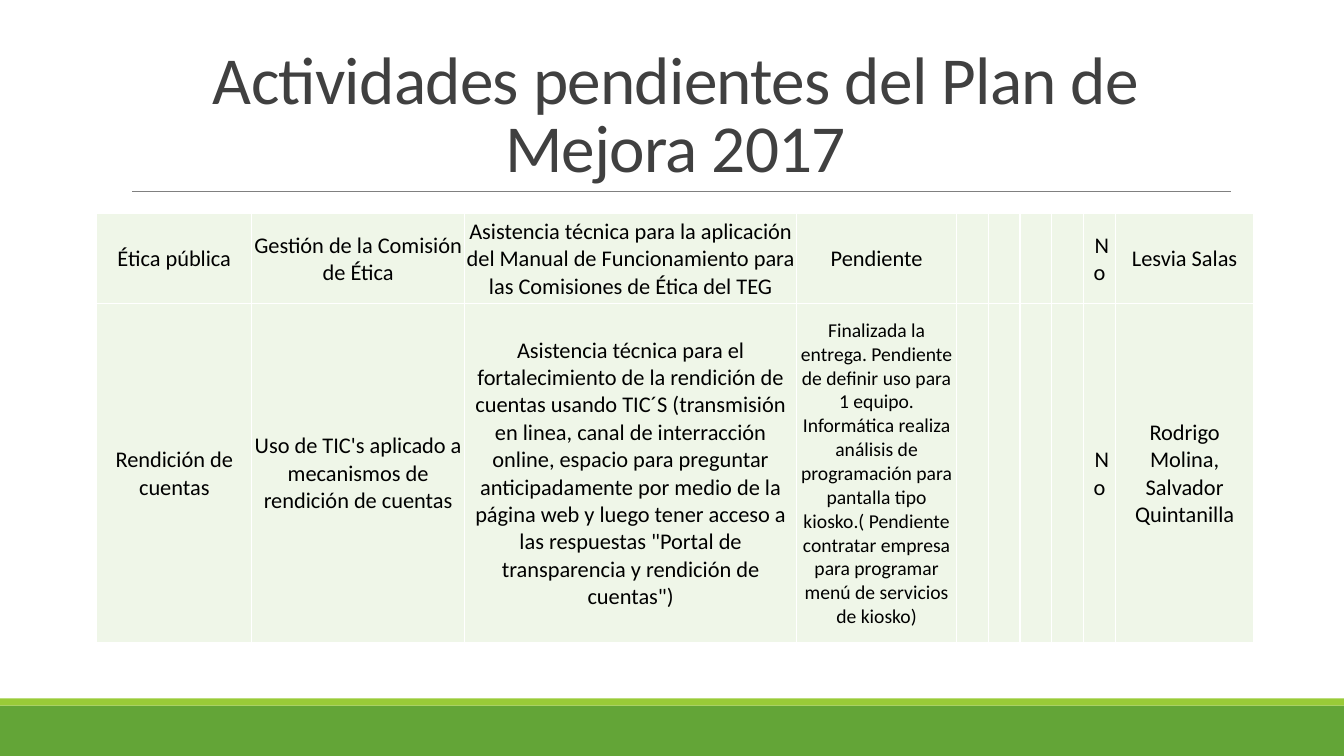
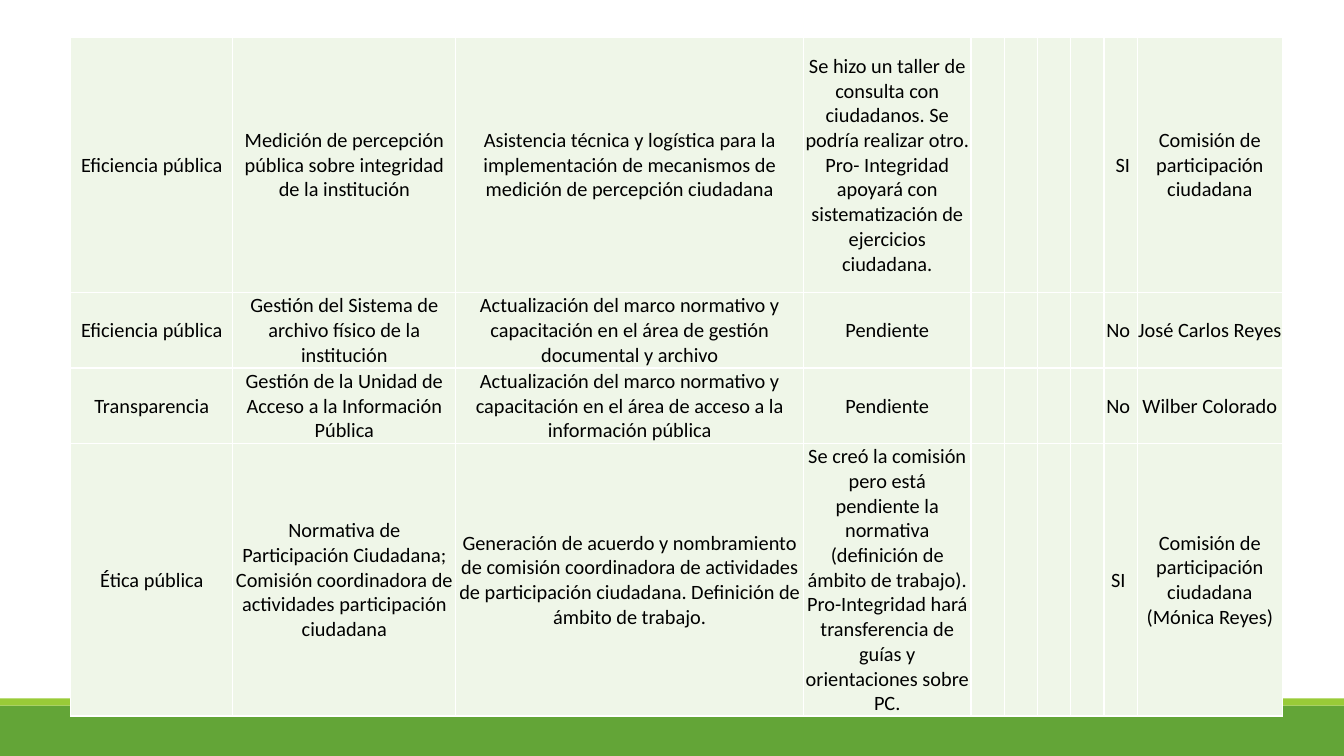
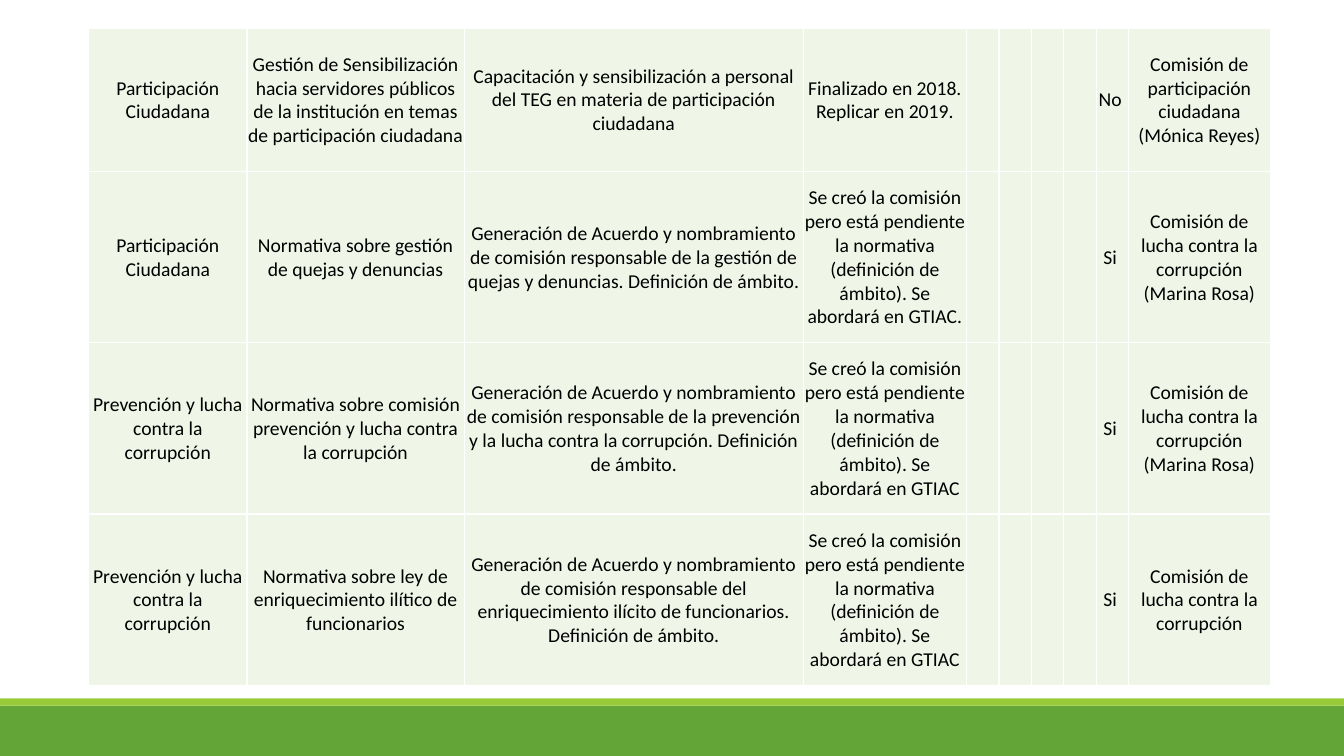
from dataclasses import dataclass

from lxml import etree
from pptx import Presentation
from pptx.dml.color import RGBColor
from pptx.enum.shapes import MSO_CONNECTOR, MSO_SHAPE
from pptx.enum.text import MSO_ANCHOR, MSO_AUTO_SIZE, PP_ALIGN
from pptx.oxml.ns import qn
from pptx.slide import Slide
from pptx.table import _Cell
from pptx.text.text import TextFrame
from pptx.util import Inches, Pt

RECTANGLE = MSO_SHAPE.RECTANGLE
STRAIGHT = MSO_CONNECTOR.STRAIGHT
CENTER = PP_ALIGN.CENTER
MIDDLE, BOTTOM = MSO_ANCHOR.MIDDLE, MSO_ANCHOR.BOTTOM
NO_AUTOFIT = MSO_AUTO_SIZE.NONE
TITLE_ONLY, BLANK = 5, 6

FONT = "Calibri"
COLORS = {
    "footer": "63A537",
    "accent": "99CB38",
    "rule": "808080",
    "title": "404040",
    "text": "000000",
    "cell": "EFF6E8",
    "border": "FFFFFF",
}
SLIDE_WIDTH, SLIDE_HEIGHT = 13.33, 7.5
NBSP = chr(160)  # no-break space

# Column widths at scale 1: four text columns, four empty ones, flag, lead
COLUMN_WIDTHS = [1.61, 2.21, 3.45, 1.66] + [0.33] * 5 + [1.44]
EMPTY_COLUMNS = 4


@dataclass(frozen=True)
class Band:
    top: float
    height: float
    color: str


@dataclass(frozen=True)
class Activity:
    axis: str
    area: str
    task: str
    status: str
    flag: str
    lead: str
    status_size: float | None = None


@dataclass(frozen=True)
class PlanPage:
    left: float
    top: float
    scale: float
    size: float
    row_heights: list[float]
    activities: list[Activity]
    title: str = ""


BANDS = [Band(7, 0.5, "footer"), Band(6.93, 0.07, "accent")]

# Wording that recurs
EFFICIENCY = "Eficiencia pública"
ETHICS = "Ética pública"
PARTICIPATION = "Participación Ciudadana"
PREVENTION = "Prevención y lucha contra la corrupción"
PENDING = "Pendiente"
SCOPE_PENDING = (
    "Se creó la comisión pero está pendiente la normativa "
    "(definición de ámbito). Se abordará en GTIAC"
)
PARTICIPATION_LEAD = "Comisión de participación ciudadana"
CORRUPTION_LEAD = "Comisión de lucha contra la corrupción"

PAGES = [
    PlanPage(
        0.96, 2.12, 0.955, 16, [0.89, 3.37],
        [
            Activity(
                ETHICS,
                "Gestión de la Comisión de Ética",
                "Asistencia técnica para la aplicación del Manual de "
                "Funcionamiento para las Comisiones de Ética del TEG",
                PENDING, f"{NBSP}No", "Lesvia Salas",
            ),
            Activity(
                "Rendición de cuentas",
                "Uso de TIC's aplicado a mecanismos de rendición de cuentas",
                "Asistencia técnica para el fortalecimiento de la rendición de "
                "cuentas usando TIC´S (transmisión en linea, canal de "
                "interracción online, espacio para preguntar anticipadamente "
                "por medio de la página web y luego tener acceso a las "
                'respuestas "Portal de transparencia y rendición de cuentas")',
                "Finalizada la entrega. Pendiente de definir uso para 1 equipo. "
                "Informática realiza análisis de programación para pantalla "
                "tipo kiosko.( Pendiente contratar empresa para programar menú "
                "de servicios de kiosko)",
                f"{NBSP}No", "Rodrigo Molina,\nSalvador Quintanilla",
                status_size=14,
            ),
        ],
        title="Actividades pendientes del Plan de Mejora 2017",
    ),
    PlanPage(
        0.7, 0.37, 1, 14.5, [2.53, 0.75, 0.75, 2.55],
        [
            Activity(
                EFFICIENCY,
                "Medición de percepción pública sobre integridad de la "
                "institución",
                "Asistencia técnica y logística para la implementación de "
                "mecanismos de medición de percepción ciudadana",
                "Se hizo un taller de consulta con ciudadanos. Se podría "
                "realizar otro. Pro- Integridad apoyará con sistematización "
                "de ejercicios ciudadana.",
                f"{NBSP}SI", PARTICIPATION_LEAD,
            ),
            Activity(
                EFFICIENCY,
                "Gestión del Sistema de archivo físico de la institución",
                "Actualización del marco normativo y capacitación en el área "
                "de gestión documental y archivo",
                PENDING, f"No{NBSP}", "José Carlos Reyes",
            ),
            Activity(
                "Transparencia",
                "Gestión de la Unidad de Acceso a la Información Pública",
                "Actualización del marco normativo y capacitación en el área "
                "de acceso a la información pública",
                PENDING, f"No{NBSP}", "Wilber Colorado",
            ),
            Activity(
                ETHICS,
                "Normativa de Participación Ciudadana; Comisión coordinadora "
                "de actividades participación ciudadana",
                "Generación de acuerdo y nombramiento de comisión coordinadora "
                "de actividades de participación ciudadana. Definición de "
                "ámbito de trabajo.",
                "Se creó la comisión pero está pendiente la normativa "
                "(definición de ámbito de trabajo). Pro-Integridad hará "
                "transferencia de guías y orientaciones sobre PC.",
                f"SI{NBSP}", f"{PARTICIPATION_LEAD} (Mónica Reyes)",
            ),
        ],
    ),
    PlanPage(
        0.88, 0.28, 0.975, 14, [1.42, 1.7, 1.7, 1.7],
        [
            Activity(
                PARTICIPATION,
                "Gestión de Sensibilización hacia servidores públicos de la "
                "institución en temas de participación ciudadana",
                "Capacitación y sensibilización a personal del TEG en materia "
                "de participación ciudadana",
                "Finalizado en 2018. Replicar en 2019.",
                f"No{NBSP}", f"{PARTICIPATION_LEAD} (Mónica Reyes)",
            ),
            Activity(
                PARTICIPATION,
                "Normativa sobre gestión de quejas y denuncias",
                "Generación de Acuerdo y nombramiento de comisión responsable "
                "de la gestión de quejas y denuncias. Definición de ámbito.",
                f"{SCOPE_PENDING}.",
                f"Si{NBSP}", f"{CORRUPTION_LEAD} (Marina Rosa)",
            ),
            Activity(
                PREVENTION,
                "Normativa sobre comisión prevención y lucha contra la "
                "corrupción",
                "Generación de Acuerdo y nombramiento de comisión responsable "
                "de la prevención y la lucha contra la corrupción. Definición "
                "de ámbito.",
                SCOPE_PENDING,
                f"Si{NBSP}", f"{CORRUPTION_LEAD} (Marina Rosa)",
            ),
            Activity(
                PREVENTION,
                "Normativa sobre ley de enriquecimiento ilítico de "
                "funcionarios",
                "Generación de Acuerdo y nombramiento de comisión responsable "
                "del enriquecimiento ilícito de funcionarios. Definición de "
                "ámbito.",
                SCOPE_PENDING,
                f"Si{NBSP}", CORRUPTION_LEAD,
            ),
        ],
    ),
]


def rgb(name: str) -> RGBColor:
    return RGBColor.from_string(COLORS[name])


def write_text(
    frame: TextFrame,
    text: str,
    *,
    size: float,
    color: str = "text",
    line_spacing: float | None = None,
    letter_spacing: float = 0,
) -> None:
    """Fill a frame with one centred paragraph; a newline breaks the line."""
    paragraph = frame.paragraphs[0]
    paragraph.text = text
    paragraph.alignment = CENTER
    paragraph.line_spacing = line_spacing
    for run in paragraph.runs:
        run.font.name = FONT
        run.font.size = Pt(size)
        run.font.color.rgb = rgb(color)
        if letter_spacing:
            run.font._element.set("spc", str(round(letter_spacing * 100)))


def draw_bands(slide: Slide) -> None:
    for band in BANDS:
        bar = slide.shapes.add_shape(
            RECTANGLE, 0, Inches(band.top), Inches(SLIDE_WIDTH), Inches(band.height)
        )
        bar.shadow.inherit = False
        bar.fill.solid()
        bar.fill.fore_color.rgb = rgb(band.color)
        bar.line.fill.background()


def draw_title(slide: Slide, text: str) -> None:
    """Place the title and the thin rule below it."""
    title = slide.shapes.title
    title.left, title.top = Inches(1.2), Inches(0.31)
    title.width, title.height = Inches(11), Inches(1.59)
    title.text_frame.auto_size = NO_AUTOFIT
    title.text_frame.vertical_anchor = BOTTOM
    write_text(title.text_frame, text, size=48, color="title",
               line_spacing=0.85, letter_spacing=-0.5)

    rule = slide.shapes.add_connector(
        STRAIGHT, Inches(1.31), Inches(1.9), Inches(12.21), Inches(1.9)
    )
    rule.line.color.rgb = rgb("rule")
    rule.line.width = Pt(0.5)
    etree.SubElement(rule._element.spPr, qn("a:effectLst"))


def format_cell(cell: _Cell) -> None:
    """Set the insets, white borders and fill of a cell."""
    cell.margin_left = cell.margin_right = cell.margin_top = Inches(0.01)
    cell.margin_bottom = 0
    cell.vertical_anchor = MIDDLE
    properties = cell._tc.get_or_add_tcPr()
    for side in ("lnL", "lnR", "lnT", "lnB"):
        border = etree.SubElement(properties, qn(f"a:{side}"), w=str(Pt(1)))
        fill = etree.SubElement(border, qn("a:solidFill"))
        etree.SubElement(fill, qn("a:srgbClr"), val=COLORS["border"])
    cell.fill.solid()
    cell.fill.fore_color.rgb = rgb("cell")


def draw_activities(slide: Slide, page: PlanPage) -> None:
    widths = [width * page.scale for width in COLUMN_WIDTHS]
    table = slide.shapes.add_table(
        len(page.activities), len(widths), Inches(page.left), Inches(page.top),
        Inches(sum(widths)), Inches(sum(page.row_heights)),
    ).table
    table.first_row = table.horz_banding = False
    for column, width in zip(table.columns, widths):
        column.width = Inches(width)

    for row, height, activity in zip(table.rows, page.row_heights, page.activities):
        row.height = Inches(height)
        texts = [activity.axis, activity.area, activity.task, activity.status]
        texts += [""] * EMPTY_COLUMNS + [activity.flag, activity.lead]
        for cell, text in zip(row.cells, texts):
            format_cell(cell)
            is_status = text == activity.status
            size = activity.status_size if is_status else None
            write_text(cell.text_frame, text, size=size or page.size)


def main() -> None:
    deck = Presentation()
    deck.slide_width, deck.slide_height = Inches(SLIDE_WIDTH), Inches(SLIDE_HEIGHT)
    for page in PAGES:
        layout = deck.slide_layouts[TITLE_ONLY if page.title else BLANK]
        slide = deck.slides.add_slide(layout)
        draw_bands(slide)
        if page.title:
            draw_title(slide, page.title)
        draw_activities(slide, page)
    deck.save("out.pptx")


if __name__ == "__main__":
    main()
